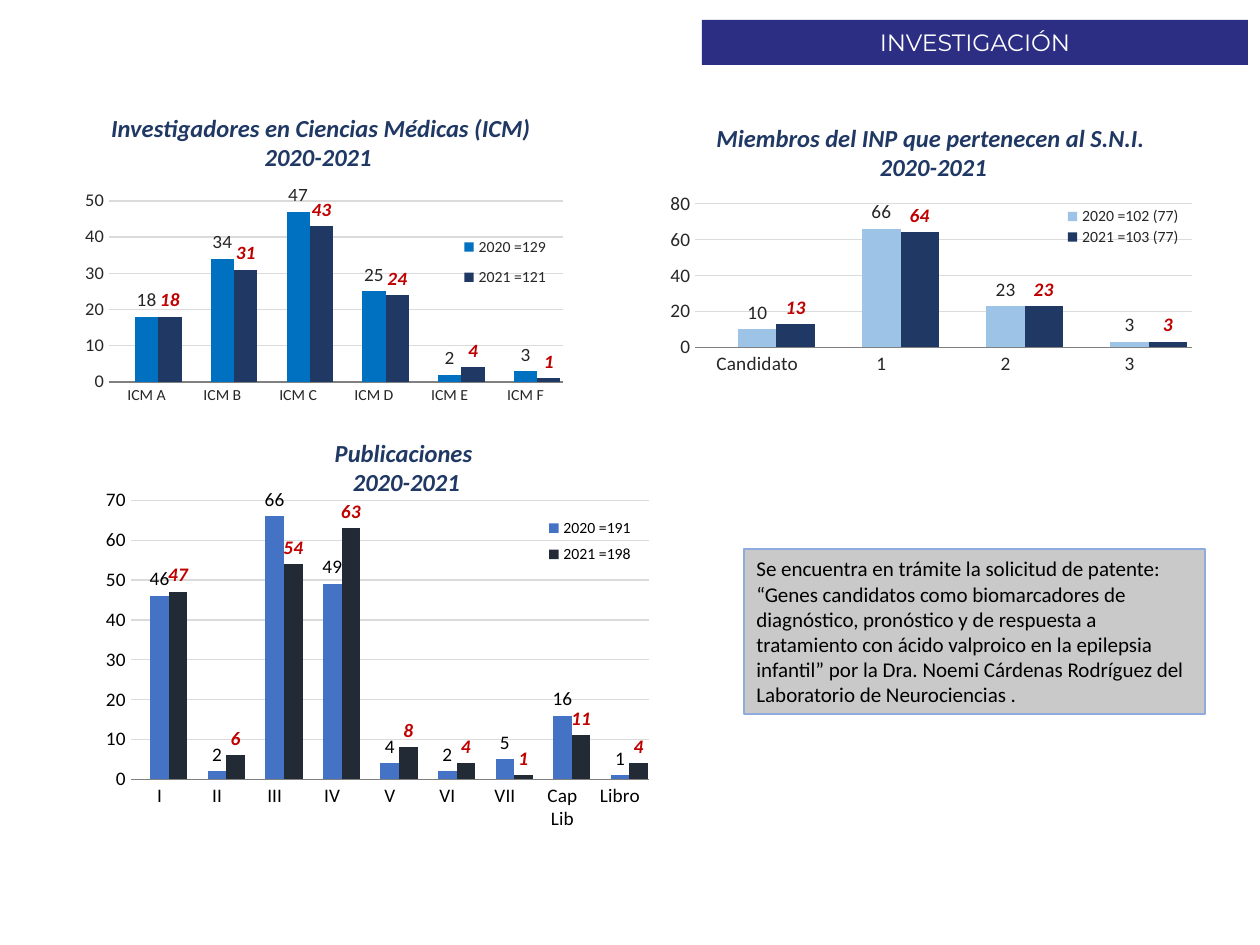
import dataclasses
import typing

import pptx
import pptx.chart.data
import pptx.dml.color
import pptx.enum.chart
import pptx.enum.shapes
import pptx.enum.text
import pptx.oxml
import pptx.oxml.ns
import pptx.util

SCALE = 914400 / 126  # EMU per px
HEX = {
    "navy": "203864", "banner": "2C2E83", "red": "C00000", "white": "FFFFFF",
    "black": "000000", "ink": "262626", "grid": "DBDBDB", "axis": "808080",
    "note": "C9C9C9", "edge": "8FAADC", "pale": "99CCFF", "blue": "0070C0",
    "sky": "9DC3E6", "royal": "4472C4", "dark": "222A35",
}
CENTER = pptx.enum.text.PP_ALIGN.CENTER
LEFT = pptx.enum.text.PP_ALIGN.LEFT
MIDDLE = pptx.enum.text.MSO_ANCHOR.MIDDLE
SHAPE = pptx.enum.shapes.MSO_SHAPE
CHART = pptx.enum.chart
HEAD = {"name": "Calibri", "size": 14, "color": "navy", "bold": True, "italic": True}
NOTE = {"name": "Calibri", "size": 12, "color": "black"}
TITLE = {"name": "Montserrat", "size": 13.5, "color": "white", "bold": False}
MARK = {"size": 11, "color": "red", "bold": True, "italic": True}


class Box(typing.NamedTuple):
    x: int
    y: int
    w: int
    h: int


class Bars(typing.NamedTuple):
    name: str
    color: str
    vals: tuple


@dataclasses.dataclass
class Graph:
    box: Box
    cats: tuple
    old: Bars
    new: Bars
    plot: tuple
    key: tuple
    top: int
    step: int
    gap: int = 25
    size: float = 11
    small: float = 11
    ink: str = "ink"


GRAPHS = [
    Graph(Box(72, 184, 498, 228), tuple(f"ICM {c}" for c in "ABCDEF"),
          Bars("2020 =129", "blue", (18, 34, 47, 25, 2, 3)),
          Bars("2021 =121", "navy", (18, 31, 43, 24, 4, 1)),
          (0.074, 0.049, 0.913, 0.816), (0.77, 0.16, 0.2, 0.33),
          50, 10, size=10.5, small=9),
    Graph(Box(645, 192, 566, 190), ("Candidato", "1", "2", "3"),
          Bars("2020 =102 (77)", "sky", (10, 66, 23, 3)),
          Bars("2021 =103 (77)", "navy", (13, 64, 23, 3)),
          (0.089, 0.052, 0.877, 0.765), (0.73, 0.06, 0.23, 0.23), 80, 20),
    Graph(Box(72, 488, 601, 359),
          ("I", "II", "III", "IV", "V", "VI", "VII", "Cap Lib", "Libro"),
          Bars("2020 =191 ", "royal", (46, 2, 66, 49, 4, 2, 5, 16, 1)),
          Bars("2021 =198", "dark", (47, 6, 54, 63, 8, 4, 1, 11, 4)),
          (0.098, 0.025, 0.862, 0.785), (0.78, 0.055, 0.17, 0.17),
          70, 10, gap=10, ink="black"),
]
HEADS = [
    (Box(23, 98, 596, 88), "Investigadores en Ciencias Médicas (ICM)\v2020-2021 "),
    (Box(607, 108, 653, 88), "Miembros del INP que pertenecen al S.N.I. \n2020-2021"),
    (Box(72, 423, 669, 88), "Publicaciones \n2020-2021"),
]
PATENT = (
    "Se encuentra en trámite la solicitud de patente: “Genes candidatos como "
    "biomarcadores de diagnóstico, pronóstico y de respuesta a tratamiento con "
    "ácido valproico en la epilepsia infantil” por la Dra. Noemi Cárdenas "
    "Rodríguez del Laboratorio de Neurociencias ."
)


def rgb(key: str) -> pptx.dml.color.RGBColor:
    return pptx.dml.color.RGBColor.from_string(HEX[key])


def emu(box: Box) -> list:
    return [pptx.util.Emu(round(n * SCALE)) for n in box]


def style(font, form: dict) -> None:
    for key, val in form.items():
        if key == "color":
            font.color.rgb = rgb(val)
        else:
            setattr(font, key, pptx.util.Pt(val) if key == "size" else val)


def paint(part, key: str) -> None:
    part.fill.solid()
    part.fill.fore_color.rgb = rgb(key)


def write(shape, text: str, form: dict, align) -> None:
    frame = shape.text_frame
    frame.text = text
    frame.word_wrap = True
    frame.vertical_anchor = MIDDLE
    for para in frame.paragraphs:
        para.alignment = align
        for run in para.runs:
            style(run.font, form)


def add_box(slide, kind, box: Box, text: str, form: dict, align):
    shape = slide.shapes.add_shape(kind, *emu(box))
    shape.shadow.inherit = False
    shape.fill.background()
    shape.line.fill.background()
    write(shape, text, form, align)
    return shape


def layout(spot: tuple, inner: bool):
    """Manual layout as fractions of the chart area."""
    target = '<c:layoutTarget val="inner"/>' if inner else ""
    modes = "".join(f'<c:{n}Mode val="edge"/>' for n in "xy")
    sides = "".join(f'<c:{n} val="{v}"/>' for n, v in zip("xywh", spot))
    return pptx.oxml.parse_xml(
        f'<c:layout {pptx.oxml.ns.nsdecls("c")}><c:manualLayout>'
        f"{target}{modes}{sides}</c:manualLayout></c:layout>")


def place(chart, tag: str, spot: tuple, index: int) -> None:
    name = pptx.oxml.ns.qn
    part = chart.element.find(f".//{name(tag)}")
    for old in part.findall(name("c:layout")):
        part.remove(old)
    part.insert(index, layout(spot, tag == "c:plotArea"))
    if tag == "c:legend":  # the empty first series has no entry
        part.insert(index, pptx.oxml.parse_xml(
            f'<c:legendEntry {pptx.oxml.ns.nsdecls("c")}>'
            '<c:idx val="0"/><c:delete val="1"/></c:legendEntry>'))


def add_graph(slide, graph: Graph) -> None:
    rows = [Bars("Series 1", "pale", (None,) * len(graph.cats)), graph.old, graph.new]
    data = pptx.chart.data.CategoryChartData()
    data.categories = graph.cats
    for row in rows:
        data.add_series(row.name, row.vals)
    chart = slide.shapes.add_chart(
        CHART.XL_CHART_TYPE.COLUMN_CLUSTERED, *emu(graph.box), data).chart
    chart.has_title = False
    style(chart.font, {"name": "Calibri", "size": graph.size, "color": graph.ink})

    # Axes
    cat, val = chart.category_axis, chart.value_axis
    for axis in (cat, val):
        axis.major_tick_mark = axis.minor_tick_mark = CHART.XL_TICK_MARK.NONE
    style(cat.tick_labels.font, {"size": graph.small, "color": graph.ink})
    cat.format.line.color.rgb = rgb("axis")
    cat.format.line.width = pptx.util.Pt(0.75)
    limits = {"minimum_scale": 0, "maximum_scale": graph.top,
              "major_unit": graph.step, "has_major_gridlines": True}
    for key, num in limits.items():
        setattr(val, key, num)
    val.format.line.fill.background()
    val.major_gridlines.format.line.color.rgb = rgb("grid")
    val.major_gridlines.format.line.width = pptx.util.Pt(0.75)

    # Bars and labels
    plot = chart.plots[0]
    for key, num in {"gap_width": graph.gap, "overlap": 0,
                     "vary_by_categories": False}.items():
        setattr(plot, key, num)
    plain = {"size": 11, "color": graph.ink}
    for bars, row, form in zip(plot.series, rows, (plain, plain, MARK)):
        paint(bars.format, row.color)
        labels = bars.data_labels
        labels.show_value = True
        labels.position = CHART.XL_LABEL_POSITION.OUTSIDE_END
        style(labels.font, form)

    # Legend and plot area
    chart.has_legend = True
    chart.legend.position = CHART.XL_LEGEND_POSITION.RIGHT
    chart.legend.include_in_layout = False
    style(chart.legend.font, {"size": 9, "color": graph.ink})
    place(chart, "c:legend", graph.key, 1)
    place(chart, "c:plotArea", graph.plot, 0)


def main() -> None:
    deck = pptx.Presentation()
    deck.slide_width, deck.slide_height = emu(Box(0, 0, 1260, 945))[2:]
    slide = deck.slides.add_slide(deck.slide_layouts[5])

    # Banner
    title = slide.shapes.title
    sides = ("left", "top", "width", "height")
    for side, num in zip(sides, emu(Box(702, 20, 546, 45))):
        setattr(title, side, num)
    paint(title, "banner")
    write(title, "INVESTIGACIÓN", TITLE, CENTER)

    # Charts and their headings
    for graph in GRAPHS:
        add_graph(slide, graph)
    for box, text in HEADS:
        add_box(slide, SHAPE.ROUNDED_RECTANGLE, box, text, HEAD, CENTER)

    # Patent note
    note = add_box(slide, SHAPE.RECTANGLE, Box(744, 549, 461, 165), PATENT, NOTE, LEFT)
    paint(note, "note")
    note.line.color.rgb = rgb("edge")
    note.line.width = pptx.util.Pt(0.75)

    deck.save("out.pptx")


if __name__ == "__main__":
    main()
